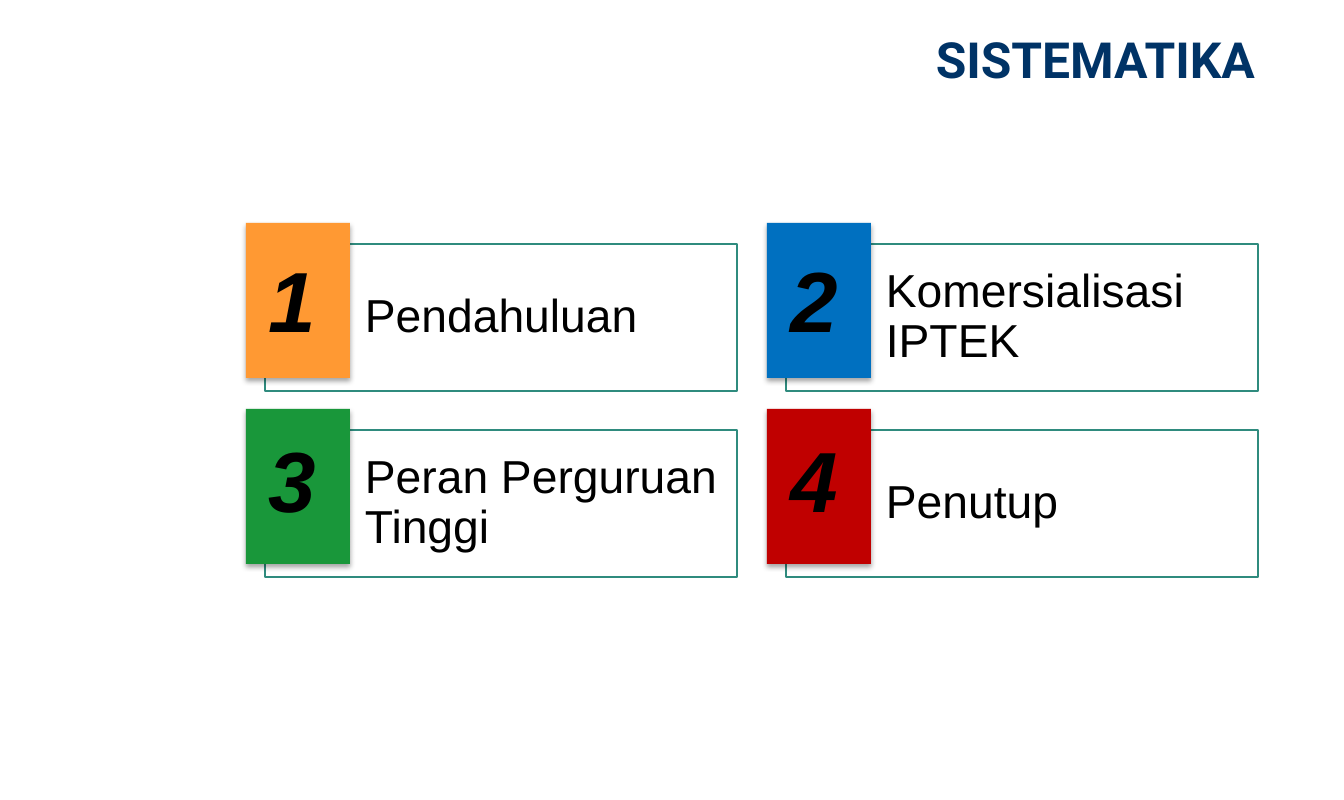
from lxml import etree
from pptx import Presentation
from pptx.dml.color import RGBColor
from pptx.enum.shapes import MSO_SHAPE
from pptx.enum.text import MSO_ANCHOR, MSO_AUTO_SIZE, PP_ALIGN
from pptx.oxml.ns import qn
from pptx.util import Emu, Pt

RECTANGLE = MSO_SHAPE.RECTANGLE
TOP, MIDDLE = MSO_ANCHOR.TOP, MSO_ANCHOR.MIDDLE
LEFT, RIGHT = PP_ALIGN.LEFT, PP_ALIGN.RIGHT
GROW = MSO_AUTO_SIZE.SHAPE_TO_FIT_TEXT

EMU_PER_PX = 914400 / 128
SECTIONS = [
    ("1", "Pendahuluan", "FF9933"),
    ("2", "Komersialisasi IPTEK", "0070C0"),
    ("3", "Peran Perguruan Tinggi", "19973A"),
    ("4", "Penutup", "C00000"),
]
HEADING = {"name": "Roboto", "size": Pt(28), "bold": True}
TOPIC = {"name": "Arial", "size": Pt(26)}
NUMERAL = {"name": "Arial", "size": Pt(48), "bold": True, "italic": True}


def px(length):
    """Turn px into EMU."""
    return Emu(round(length * EMU_PER_PX))


def rgb(code):
    """Turn a hex string into a colour."""
    return RGBColor.from_string(code)


def write(shape, text, font, color, insets, anchor=MIDDLE, align=LEFT):
    """Fill a shape with one formatted paragraph."""
    frame = shape.text_frame
    left, top, right, bottom = map(px, insets)
    layout = {"word_wrap": True, "vertical_anchor": anchor,
              "margin_left": left, "margin_top": top,
              "margin_right": right, "margin_bottom": bottom}
    for key, value in layout.items():
        setattr(frame, key, value)
    paragraph = frame.paragraphs[0]
    paragraph.alignment = align
    run = paragraph.add_run()
    run.text = text
    for key, value in font.items():
        setattr(run.font, key, value)
    run.font.color.rgb = rgb(color)
    return frame


def add_rectangle(slide, box, fill):
    """Draw a filled rectangle without line or shadow."""
    rectangle = slide.shapes.add_shape(RECTANGLE, *map(px, box))
    rectangle.shadow.inherit = False
    rectangle.fill.solid()
    rectangle.fill.fore_color.rgb = rgb(fill)
    rectangle.line.fill.background()
    return rectangle


def set_opacity(color_element, percent):
    """Add an opacity to a colour element."""
    etree.SubElement(color_element, qn("a:alpha"), val=str(percent * 1000))


def cast_shadow(shape):
    """Give a shape a soft shadow straight below it."""
    effects = shape.element.spPr.find(qn("a:effectLst"))
    shadow = etree.SubElement(effects, qn("a:outerShdw"), blurRad=str(Pt(3.1)),
                              dist=str(Pt(1.8)), dir="5400000", rotWithShape="0")
    set_opacity(etree.SubElement(shadow, qn("a:srgbClr"), val="000000"), 35)


def add_title(slide, box, text):
    """Place the right-aligned heading."""
    heading = slide.shapes.add_textbox(*map(px, box))
    write(heading, text, HEADING, "003366", (13, 6, 13, 6), align=RIGHT)


def add_card(slide, box, topic, color):
    """Place a topic frame with its coloured tile at the upper left."""
    left, top, width, height = box
    topic_frame = add_rectangle(slide, box, "FFFFFF")
    set_opacity(topic_frame.element.spPr.find(".//" + qn("a:srgbClr")), 40)
    topic_frame.line.color.rgb = rgb("2F8B7E")
    topic_frame.line.width = Pt(0.75)
    text = write(topic_frame, topic, TOPIC, "000000", (100, 14, 14, 14))
    text.paragraphs[0].line_spacing = 0.9
    tile = add_rectangle(slide, (left - 19, top - 21, 104, height + 8), color)
    cast_shadow(tile)


def add_number(slide, box, number):
    """Place a large section number."""
    numeral = slide.shapes.add_textbox(*map(px, box))
    text = write(numeral, number, NUMERAL, "000000", (13, 6, 13, 6), anchor=TOP)
    text.auto_size = GROW


def add_sections(slide, box):
    """Lay out the cards and their numbers in two columns."""
    left, top, width, height = box
    for index, (number, topic, color) in enumerate(SECTIONS):
        row, column = divmod(index, 2)
        add_card(slide, (left + column * 521, top + row * 186, width, height),
                 topic, color)
        add_number(slide, (left - 9 + column * 522, top - 3 + row * 180, 74, 116),
                   number)


def main():
    """Build and save the slide."""
    presentation = Presentation()
    presentation.slide_width, presentation.slide_height = px(1344), px(800)
    slide = presentation.slides.add_slide(presentation.slide_layouts[6])
    add_title(slide, (768, 0, 500, 118), "SISTEMATIKA")
    add_sections(slide, (265, 244, 472, 147))
    presentation.save("out.pptx")


if __name__ == "__main__":
    main()
